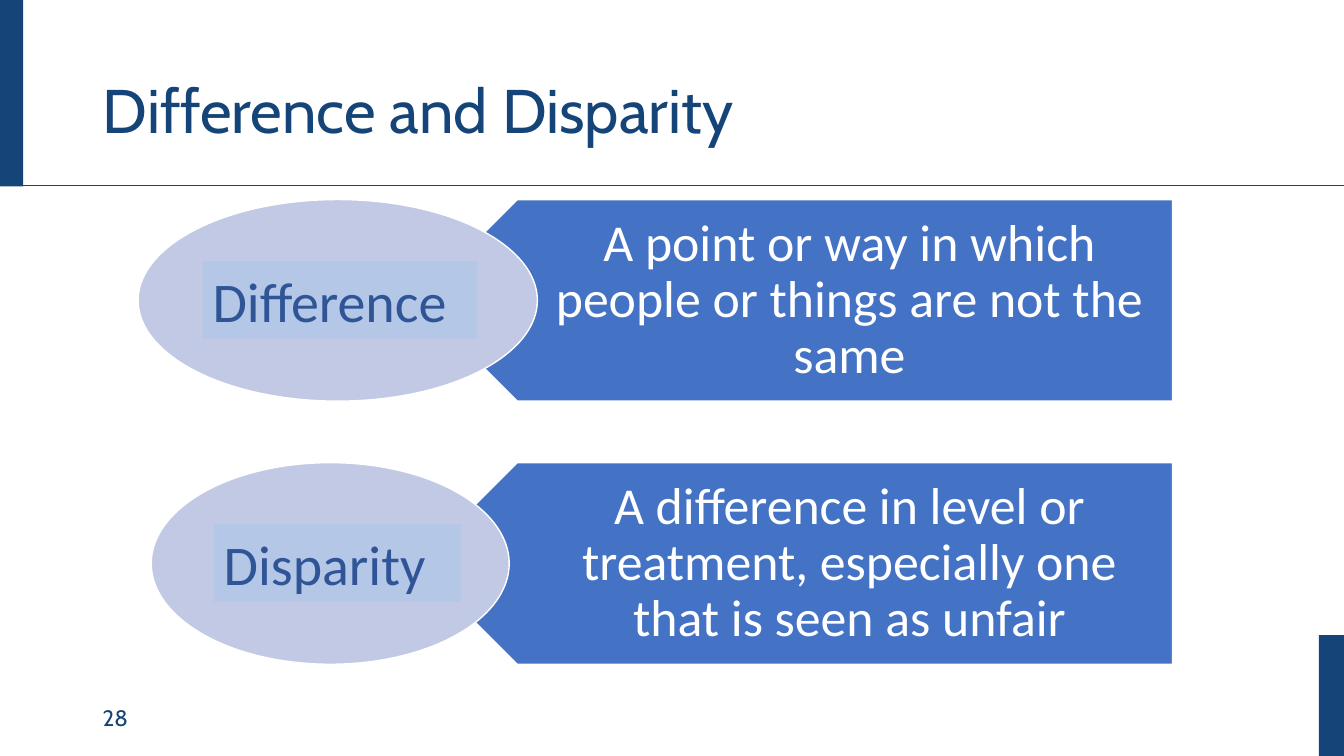
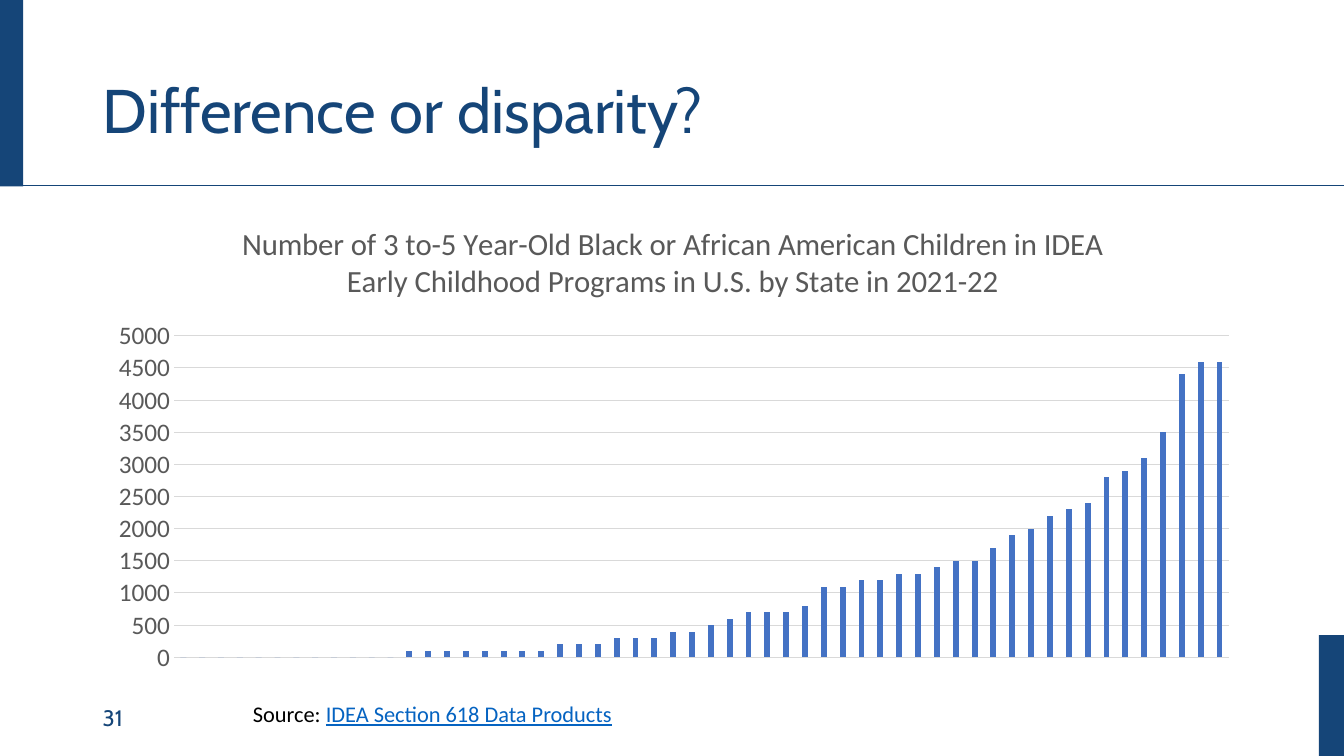
from dataclasses import dataclass

from lxml import etree
from pptx import Presentation, util as u
from pptx.chart.data import CategoryChartData
from pptx.dml.color import RGBColor
from pptx.enum import chart as charts, shapes, text
from pptx.oxml import parse_xml
from pptx.oxml.ns import nsdecls, qn

Inches, Pt = u.Inches, u.Pt


@dataclass(frozen=True)
class Theme:
    navy: str = "154578"
    blue: str = "4472C4"
    lavender: str = "C1C9E4"
    pale_blue: str = "B4C7E7"
    label_blue: str = "2F5597"
    link: str = "0563C1"
    white: str = "FFFFFF"
    black: str = "000000"
    gray: str = "595959"
    grid: str = "D9D9D9"
    heading: str = "Cabin"
    body: str = "Calibri"
    title_size: float = 44
    label_size: float = 40
    definition_size: float = 37
    chart_title_size: float = 22
    axis_size: float = 18
    small_size: float = 16


theme = Theme()


def set_font(font, name, size, color):
    font.name, font.size = name, Pt(size)
    font.color.rgb = RGBColor.from_string(color)


def add_box(slide, preset, box, fill, line=None):
    shape = slide.shapes.add_shape(preset, *[Inches(length) for length in box])
    shape.shadow.inherit = False
    shape.fill.solid()
    shape.fill.fore_color.rgb = RGBColor.from_string(fill)
    if line:
        shape.line.color.rgb = RGBColor.from_string(line)
        shape.line.width = Pt(1)
    else:
        shape.line.fill.background()
    return shape


presentation = Presentation()
presentation.slide_width, presentation.slide_height = Inches(13.33), Inches(7.5)

# Shared layout: title place
layout = presentation.slide_layouts.get_by_name("Title Only")
layout_title = layout.placeholders[0]
layout_title.left, layout_title.top = Inches(0.92), Inches(0.4)
layout_title.width, layout_title.height = Inches(11.5), Inches(1.45)

# Slides with title and page number
slides = []
for title, number in [("Difference and Disparity", "28"), ("Difference or disparity?", "31")]:
    slide = presentation.slides.add_slide(layout)
    slides.append(slide)
    frame = slide.shapes.title.text_frame
    frame.text = title
    frame.auto_size = text.MSO_AUTO_SIZE.NONE
    frame.vertical_anchor = text.MSO_ANCHOR.MIDDLE
    paragraph = frame.paragraphs[0]
    paragraph.alignment = text.PP_ALIGN.LEFT
    paragraph.line_spacing = 0.9
    set_font(paragraph.font, theme.heading, theme.title_size, theme.navy)

    page = slide.shapes.add_textbox(Inches(0.92), Inches(6.92), Inches(3), Inches(0.4))
    page.text_frame.word_wrap = True
    page.text_frame.vertical_anchor = text.MSO_ANCHOR.MIDDLE
    page.text_frame.text = number
    set_font(page.text_frame.paragraphs[0].font, theme.heading, theme.small_size, theme.navy)

definition_slide, chart_slide = slides

# Bands and rule, drawn once and moved to the layout
rectangle = shapes.MSO_SHAPE.RECTANGLE
left_band = add_box(definition_slide, rectangle, (-0.02, 0, 0.25, 1.85), theme.navy)
right_band = add_box(definition_slide, rectangle, (13.08, 6.3, 0.25, 1.2), theme.navy)
rule = definition_slide.shapes.add_connector(
    shapes.MSO_CONNECTOR.STRAIGHT, Inches(-0.02), Inches(1.84), Inches(13.33), Inches(1.84))
rule.line.color.rgb = RGBColor.from_string(theme.navy)
rule.line.width = Pt(0.5)
etree.SubElement(rule.element.spPr, qn("a:effectLst"))
for decoration in (left_band, rule, right_band):
    layout.shapes.element.append(decoration.element)

# Definitions: term, meaning, top, ellipse (left, width), label (left, width)
definitions = [
    ("Difference", "A point or way in which people or things are not the same",
     1.98, (1.37, 3.96), (2.01, 2.72)),
    ("Disparity", "A difference in level or treatment, especially one that is seen as unfair",
     4.59, (1.5, 3.55), (2.12, 2.45)),
]
for term, meaning, top, (oval_left, oval_width), (label_left, label_width) in definitions:
    arrow = add_box(definition_slide, shapes.MSO_SHAPE.PENTAGON, (4.13, top, 7.5, 2),
                    theme.blue, theme.white)
    arrow.rotation = 180

    meaning_box = definition_slide.shapes.add_textbox(Inches(4.63), Inches(top), Inches(7), Inches(2))
    frame = meaning_box.text_frame
    frame.word_wrap = True
    frame.vertical_anchor = text.MSO_ANCHOR.MIDDLE
    frame.margin_left, frame.margin_right = Inches(0.88), Inches(0.29)
    frame.margin_top = frame.margin_bottom = Inches(0.15)
    frame.text = meaning
    paragraph = frame.paragraphs[0]
    paragraph.alignment = text.PP_ALIGN.CENTER
    paragraph.line_spacing = 0.9
    set_font(paragraph.font, theme.body, theme.definition_size, theme.white)

    add_box(definition_slide, shapes.MSO_SHAPE.OVAL, (oval_left, top, oval_width, 2),
            theme.lavender, theme.white)

    label = add_box(definition_slide, rectangle, (label_left, top + 0.61, label_width, 0.77),
                    theme.pale_blue)
    frame = label.text_frame
    frame.word_wrap = True
    frame.auto_size = text.MSO_AUTO_SIZE.SHAPE_TO_FIT_TEXT
    frame.vertical_anchor = text.MSO_ANCHOR.TOP
    frame.text = term
    paragraph = frame.paragraphs[0]
    paragraph.alignment = text.PP_ALIGN.LEFT
    set_font(paragraph.font, theme.body, theme.label_size, theme.label_blue)

# Chart of children by state
children = (
    [0] * 12 + [100] * 8 + [200] * 3 + [300] * 3 + [400] * 2
    + [500, 600, 700, 700, 700, 800, 1100, 1100, 1200, 1200, 1300, 1300, 1400, 1500,
       1500, 1700, 1900, 2000, 2200, 2300, 2400, 2800, 2900, 3100, 3500, 4400, 4600, 4600])
chart_data = CategoryChartData()
chart_data.categories = [str(state) for state in range(1, len(children) + 1)]
chart_data.add_series("Series 1", children)
chart = chart_slide.shapes.add_chart(
    charts.XL_CHART_TYPE.COLUMN_CLUSTERED, Inches(0.92), Inches(2), Inches(11.5), Inches(4.76),
    chart_data).chart
set_font(chart.font, theme.body, theme.axis_size, theme.black)
chart.has_legend = False
chart.has_title = True
chart.chart_title.include_in_layout = False
frame = chart.chart_title.text_frame
frame.text = ("Number of 3 to-5 Year-Old Black or African American Children in IDEA "
              "Early Childhood Programs in U.S. by State in 2021-22")
set_font(frame.paragraphs[0].font, theme.body, theme.chart_title_size, theme.gray)
frame.paragraphs[0].font.bold = False

plot = chart.plots[0]
plot.gap_width, plot.overlap = 219, -27
plot.vary_by_categories = False
bars = plot.series[0].format.fill
bars.solid()
bars.fore_color.rgb = RGBColor.from_string(theme.blue)

chart.category_axis.visible = False
axis = chart.value_axis
axis.minimum_scale, axis.maximum_scale, axis.major_unit = 0, 5000, 500
axis.major_tick_mark = axis.minor_tick_mark = charts.XL_TICK_MARK.NONE
axis.format.line.fill.background()
set_font(axis.tick_labels.font, theme.body, theme.axis_size, theme.gray)
axis.major_gridlines.format.line.color.rgb = RGBColor.from_string(theme.grid)
axis.major_gridlines.format.line.width = Pt(0.75)

# Plot area placed below the two-line title
plot_area = chart.element.find(".//" + qn("c:plotArea"))
for old_layout in plot_area.findall(qn("c:layout")):
    plot_area.remove(old_layout)
places = "".join(f'<c:{key} val="{value}"/>' for key, value in [
    ("layoutTarget", "inner"), ("xMode", "edge"), ("yMode", "edge"),
    ("x", 0.07), ("y", 0.28), ("w", 0.91), ("h", 0.67)])
plot_area.insert(0, parse_xml(
    f'<c:layout {nsdecls("c")}><c:manualLayout>{places}</c:manualLayout></c:layout>'))

# Source line
source = chart_slide.shapes.add_textbox(Inches(2.41), Inches(6.9), Inches(4.52), Inches(0.37))
source.text_frame.word_wrap = True
source.text_frame.auto_size = text.MSO_AUTO_SIZE.SHAPE_TO_FIT_TEXT
paragraph = source.text_frame.paragraphs[0]
for words, color in [("Source: ", theme.black), ("IDEA Section 618 Data Products", theme.link)]:
    run = paragraph.add_run()
    run.text = words
    set_font(run.font, theme.body, theme.small_size, color)
    run.font.underline = color == theme.link

presentation.save("out.pptx")
